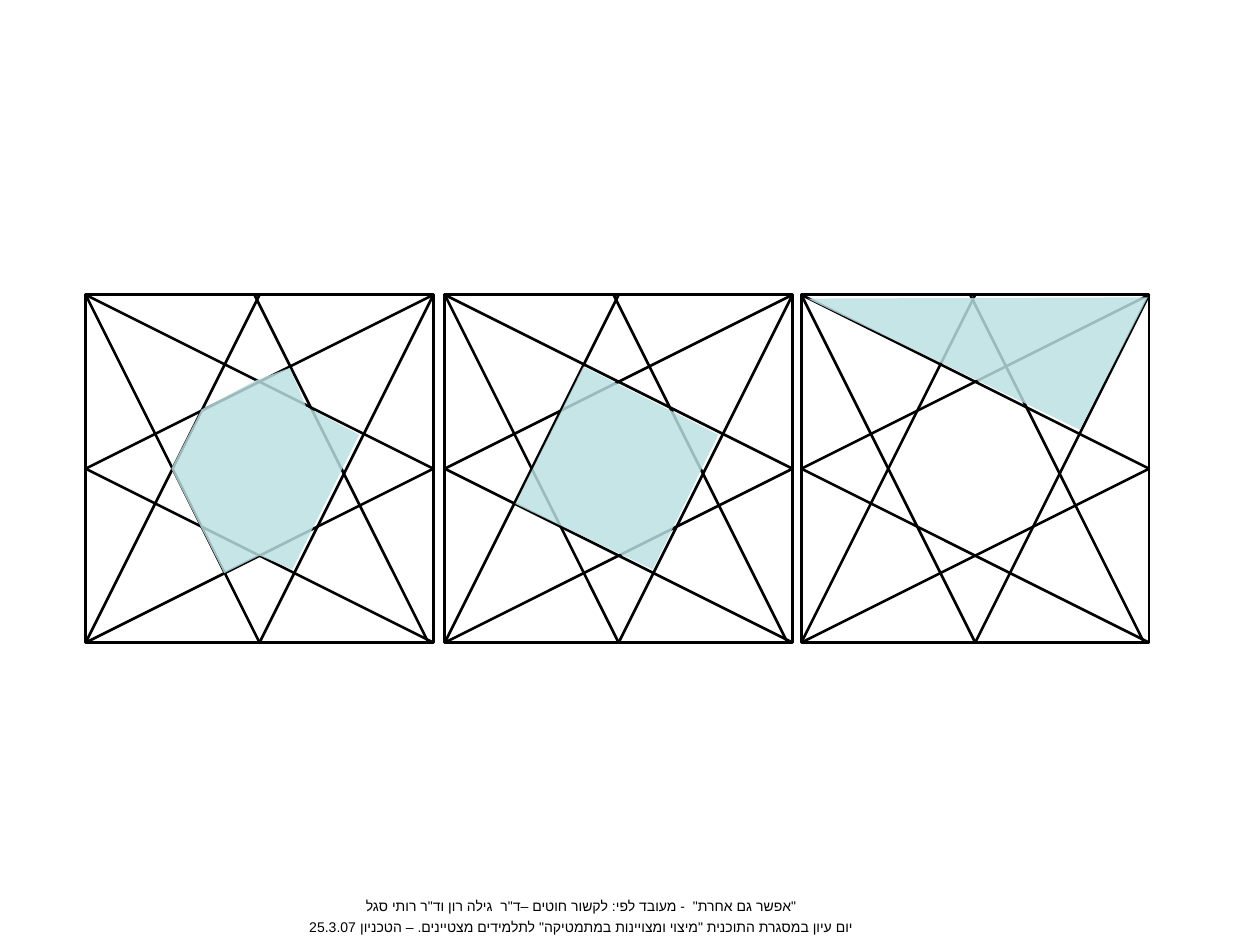
"""Build a slide of three squares crossed by threads, each with a shaded region."""
from lxml.etree import SubElement
from pptx import Presentation
from pptx.dml.color import RGBColor
from pptx.enum.shapes import MSO_CONNECTOR as Link, MSO_SHAPE as Kind
from pptx.enum.text import MSO_AUTO_SIZE as Fit, PP_ALIGN as Align
from pptx.oxml.ns import qn
from pptx.util import Inches, Pt

INK, SHADE, FONT = "000000", "BBE0E3", "Arial"
TOP, SIDE, SHIFT = 2.34, 2.76, 0.04
PANELS = [
    (3.53, [(4.09, 4), (4.63, 2.91), (5.7, 3.45), (5.18, 4.52)]),
    (6.36, [(6.41, 2.37), (9.11, 2.36), (8.57, 3.41)]),
    (0.68, [(1.36, 3.72), (1.6, 3.25), (2.03, 3.02), (2.3, 2.92), (2.43, 3.23),
            (2.85, 3.45), (2.32, 4.52), (2.06, 4.41), (1.78, 4.55)]),
]
THREADS = [
    ((0, 0), (1, 0.5)), ((0, 0.5), (1, 0)),
    ((0, 1), (1, 0.5)), ((0, 0.5), (1, 1)),
    ((0.5, 1), (1, 0)), ((0, 0), (0.5, 1)),
    ((0.5, 0), (0, 1)),
]
SLANT = ((0.5, 0), (1, 1))
SITES = {(0.5, 0): 0, (0, 0.5): 1, (0.5, 1): 2, (1, 0.5): 3}
CREDITS = [
    '"אפשר גם אחרת"  - מעובד לפי: לקשור חוטים –ד"ר  גילה רון וד"ר רותי סגל',
    'יום עיון במסגרת התוכנית "מיצוי ומצויינות במתמטיקה" לתלמידים מצטיינים. – הטכניון 25.3.07',
]


def color(code):
    return RGBColor.from_string(code)


def ink(line):
    line.color.rgb = color(INK)
    line.width = Pt(1.5)


def add_thread(group, left, ends):
    spots = [Inches(v) for x, y in ends for v in (left + x * SIDE, TOP + y * SIDE)]
    thread = group.shapes.add_connector(Link.STRAIGHT, *spots)
    ink(thread.line)
    SubElement(thread._element.spPr, qn("a:effectLst"))
    return thread


def add_square(slide, left):
    group = slide.shapes.add_group_shape()
    frame = group.shapes.add_shape(
        Kind.RECTANGLE, Inches(left), Inches(TOP), Inches(SIDE), Inches(SIDE))
    frame.shadow.inherit = False
    frame.fill.background()
    ink(frame.line)
    for start, end in THREADS:
        thread = add_thread(group, left, (start, end))
        if start in SITES:
            thread.begin_connect(frame, SITES[start])
        if end in SITES:
            thread.end_connect(frame, SITES[end])
    add_thread(group, left - SHIFT, SLANT)


def add_region(slide, points):
    spots = [(Inches(x), Inches(y)) for x, y in points]
    pen = slide.shapes.build_freeform(*spots[0])
    pen.add_line_segments(spots[1:], close=True)
    region = pen.convert_to_shape()
    region.shadow.inherit = False
    region.line.fill.background()
    region.fill.solid()
    region.fill.fore_color.rgb = color(SHADE)
    tint = region._element.spPr.find(".//" + qn("a:srgbClr"))
    SubElement(tint, qn("a:alpha"), val="83000")


def add_credits(slide):
    box = slide.shapes.add_textbox(Inches(0.94), Inches(7.07), Inches(7.35), Inches(0.41))
    frame = box.text_frame
    frame.word_wrap = True
    frame.auto_size = Fit.SHAPE_TO_FIT_TEXT
    frame.text = "\n".join(CREDITS)
    for row, para in enumerate(frame.paragraphs):
        para.alignment = Align.CENTER
        para._p.get_or_add_pPr().set("rtl", "1")
        if row:
            para.space_before = Pt(2.4)
        for run in para.runs:
            run.font.size = Pt(8)
            run.font.name = FONT
            run.font.color.rgb = color(INK)
            SubElement(run._r.rPr, qn("a:cs"), typeface=FONT)


def main():
    deck = Presentation()
    deck.slide_width, deck.slide_height = Inches(10), Inches(7.5)
    slide = deck.slides.add_slide(deck.slide_layouts[6])
    for left, points in PANELS:
        add_square(slide, left)
        add_region(slide, points)
    add_credits(slide)
    deck.save("out.pptx")


if __name__ == "__main__":
    main()
